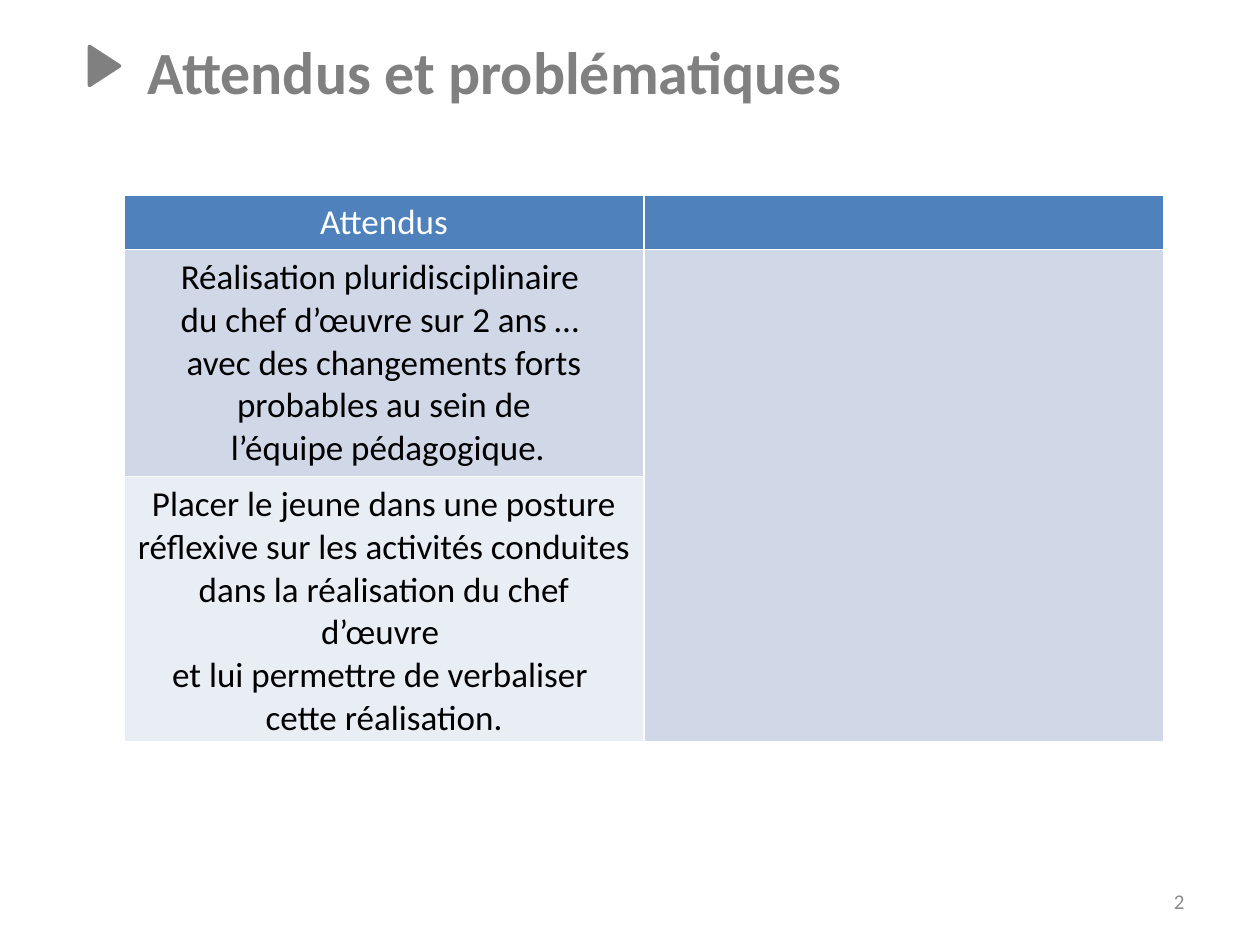
from lxml import etree
from pptx import Presentation, util as u
from pptx.dml.color import RGBColor
from pptx.enum import shapes, text
from pptx.oxml.ns import qn

PX = 914400 / 126
GREY = RGBColor(0x80, 0x80, 0x80)
PALE = RGBColor(0x8C, 0x8C, 0x8C)
WHITE = RGBColor(0xFF, 0xFF, 0xFF)
BLACK = RGBColor(0, 0, 0)
BLUE = RGBColor(0x4F, 0x81, 0xBD)
TINT = RGBColor(0xD0, 0xD8, 0xE8)
LIGHT = RGBColor(0xE9, 0xED, 0xF4)
CENTER = text.PP_ALIGN.CENTER


def px(*nums):
    return [u.Emu(round(n * PX)) for n in nums]


def write(frame, lines, align, color, **form):
    """Fill a text frame with one paragraph per line."""
    frame.word_wrap = True
    for i, line in enumerate(lines):
        para = frame.add_paragraph() if i else frame.paragraphs[0]
        para.alignment = align
        run = para.add_run()
        run.text = line
        run.font.color.rgb = color
        for key, val in {"name": "Calibri", **form}.items():
            setattr(run.font, key, val)


prs = Presentation()
prs.slide_width, prs.slide_height = px(1260, 945)
slide = prs.slides.add_slide(prs.slide_layouts[6])

# Title with its marker
mark = slide.shapes.add_shape(
    shapes.MSO_SHAPE.ISOSCELES_TRIANGLE, *px(85, 51, 39, 30))
mark.rotation = 90
mark.shadow.inherit = False
mark.fill.solid()
mark.fill.fore_color.rgb = GREY
mark.line.color.rgb = GREY
mark.line.width = u.Pt(2)

title = slide.shapes.add_textbox(*px(0, 28, 989, 94))
write(title.text_frame, ["Attendus et problématiques"], CENTER, GREY,
      size=u.Pt(34.2), bold=True)

# Table: line texts, text colour, fill and height of each row
rows = [
    (["Attendus"], WHITE, BLUE, 54),
    (["Réalisation pluridisciplinaire ",
      "du chef d’œuvre sur 2 ans … ",
      "avec des changements forts probables au sein de",
      " l’équipe pédagogique."], BLACK, TINT, 227),
    (["Placer le jeune dans une posture réflexive sur les activités conduites ",
      "dans la réalisation du chef d’œuvre ",
      "et lui permettre de verbaliser ",
      "cette réalisation."], BLACK, LIGHT, 227),
]
table = slide.shapes.add_table(3, 2, *px(124, 195, 1040, 508)).table
for col in table.columns:
    col.width = px(520)[0]
for r, (lines, ink, fill, high) in enumerate(rows):
    table.rows[r].height = px(high)[0]
    for cell in table.rows[r].cells:
        cell.vertical_anchor = text.MSO_ANCHOR.MIDDLE
        cell.fill.solid()
        cell.fill.fore_color.rgb = fill
        props = cell._tc.get_or_add_tcPr()
        for i, side in enumerate(("lnL", "lnR", "lnT", "lnB")):
            edge = etree.Element(qn("a:" + side), w=str(u.Pt(1)))
            solid = etree.SubElement(edge, qn("a:solidFill"))
            etree.SubElement(solid, qn("a:srgbClr"), val=str(WHITE))
            props.insert(i, edge)
    write(table.cell(r, 0).text_frame, lines, CENTER, ink,
          size=u.Pt(20), bold=False)
table.cell(1, 1).merge(table.cell(2, 1))

# Page number
page = slide.shapes.add_textbox(*px(903, 876, 294, 50))
page.text_frame.vertical_anchor = text.MSO_ANCHOR.MIDDLE
write(page.text_frame, ["2"], text.PP_ALIGN.RIGHT, PALE, size=u.Pt(12))

prs.save("out.pptx")
